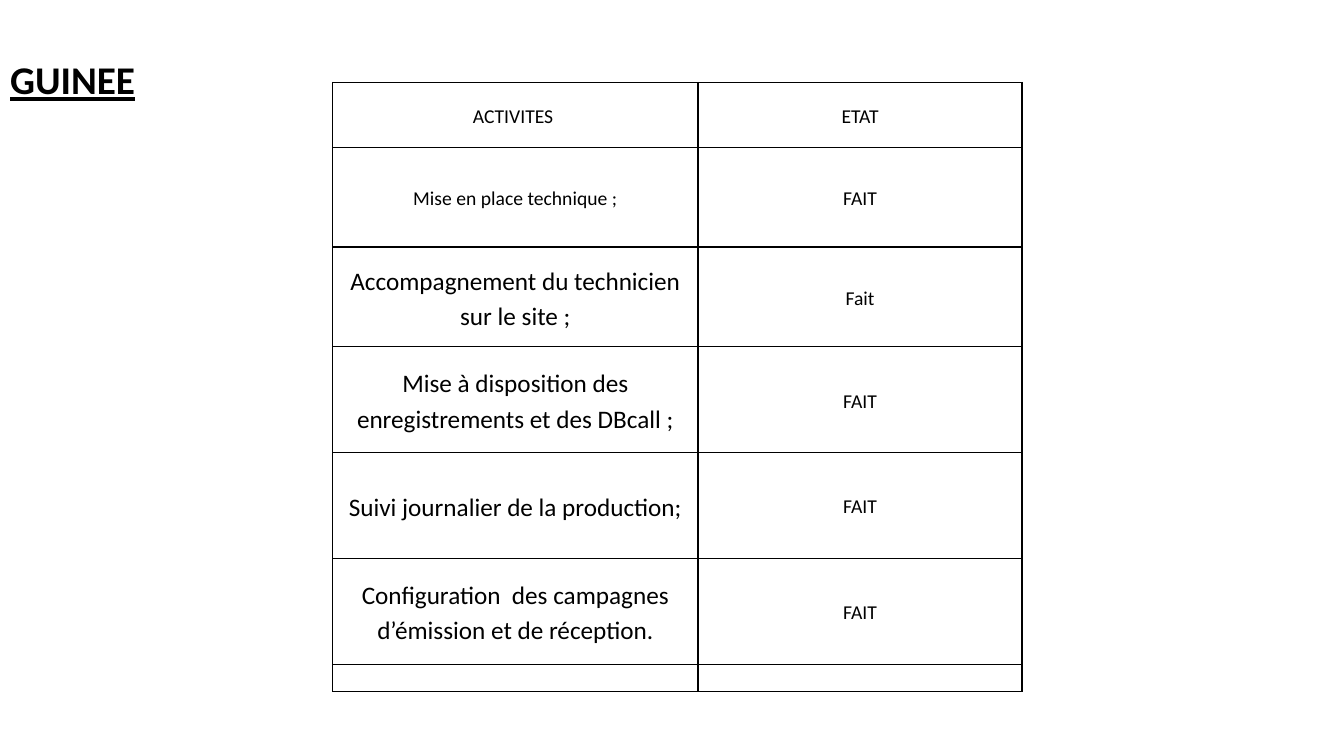
from lxml import etree
from pptx import Presentation
from pptx.dml.color import RGBColor
from pptx.enum import text
from pptx.oxml import ns
from pptx.util import Pt

BLACK = RGBColor(0, 0, 0)
WHITE = RGBColor(255, 255, 255)
FONT = "Calibri"
STATE_SIZE = 14
ACTIVITIES = [
    ("ACTIVITES ", "ETAT", 14, 46.1),
    ("Mise en place technique ;", "FAIT", 14, 71.3),
    ("Accompagnement du technicien sur le site ;", "Fait", 18, 71.3),
    ("Mise à disposition des enregistrements et des DBcall ;", "FAIT", 18, 75.6),
    ("Suivi journalier de la production;", "FAIT", 18, 75.6),
    ("Configuration  des campagnes d’émission et de réception.", "FAIT", 18, 75.6),
    ("", "", 14, 19.3),
]


def add_country(slide, left, top, width, height):
    """Place the country name in the title placeholder."""
    country = slide.shapes.title
    country.left, country.top = Pt(left), Pt(top)
    country.width, country.height = Pt(width), Pt(height)
    frame = country.text_frame
    frame.text = "GUINEE"
    frame.word_wrap = True
    frame.auto_size = text.MSO_AUTO_SIZE.NONE
    frame.vertical_anchor = text.MSO_ANCHOR.MIDDLE
    paragraph = frame.paragraphs[0]
    paragraph.alignment = text.PP_ALIGN.LEFT
    paragraph.line_spacing = 0.9
    font = paragraph.runs[0].font
    font.name, font.size, font.color.rgb = FONT, Pt(28), BLACK
    font.bold = font.underline = True


def add_borders(cell):
    """Draw a thin black line on the four sides of a cell."""
    properties = cell._tc.get_or_add_tcPr()
    for side in ("a:lnL", "a:lnR", "a:lnT", "a:lnB"):
        line = etree.SubElement(properties, ns.qn(side), w=str(Pt(1)))
        fill = etree.SubElement(line, ns.qn("a:solidFill"))
        etree.SubElement(fill, ns.qn("a:srgbClr"), val=str(BLACK))


def fill_cell(cell, wording, size, inset):
    """Write and format one cell of the activity table."""
    add_borders(cell)
    cell.fill.solid()
    cell.fill.fore_color.rgb = WHITE
    cell.margin_left = cell.margin_right = Pt(inset)
    cell.margin_top = cell.margin_bottom = 0
    cell.vertical_anchor = text.MSO_ANCHOR.MIDDLE
    cell.text_frame.text = wording
    paragraph = cell.text_frame.paragraphs[0]
    paragraph.alignment = text.PP_ALIGN.CENTER
    paragraph.line_spacing = 1.15
    for run in paragraph.runs:
        run.font.name, run.font.size, run.font.color.rgb = FONT, Pt(size), BLACK
    if not wording:
        etree.SubElement(paragraph._p, ns.qn("a:endParaRPr"), sz=str(size * 100))


def add_activities(slide, left, top, width):
    """Place the table of activities and their state."""
    height = sum(row_height for *_, row_height in ACTIVITIES)
    table = slide.shapes.add_table(
        len(ACTIVITIES), 2, Pt(left), Pt(top), Pt(width), Pt(height)).table
    table.first_row = table.horz_banding = False
    table.columns[0].width = Pt(width * 0.53)
    table.columns[1].width = Pt(width * 0.47)
    for index, (activity, state, size, row_height) in enumerate(ACTIVITIES):
        table.rows[index].height = Pt(row_height)
        fill_cell(table.cell(index, 0), activity, size, 3.6 if index else 2.2)
        fill_cell(table.cell(index, 1), state, STATE_SIZE, 2.2)


def main():
    """Build the slide and save it."""
    deck = Presentation()
    deck.slide_width, deck.slide_height = Pt(960), Pt(540)
    slide = deck.slides.add_slide(deck.slide_layouts[5])
    add_country(slide, 0, 30.2, 210.2, 56.9)
    add_activities(slide, 237.6, 59, 492.5)
    deck.save("out.pptx")


if __name__ == "__main__":
    main()
